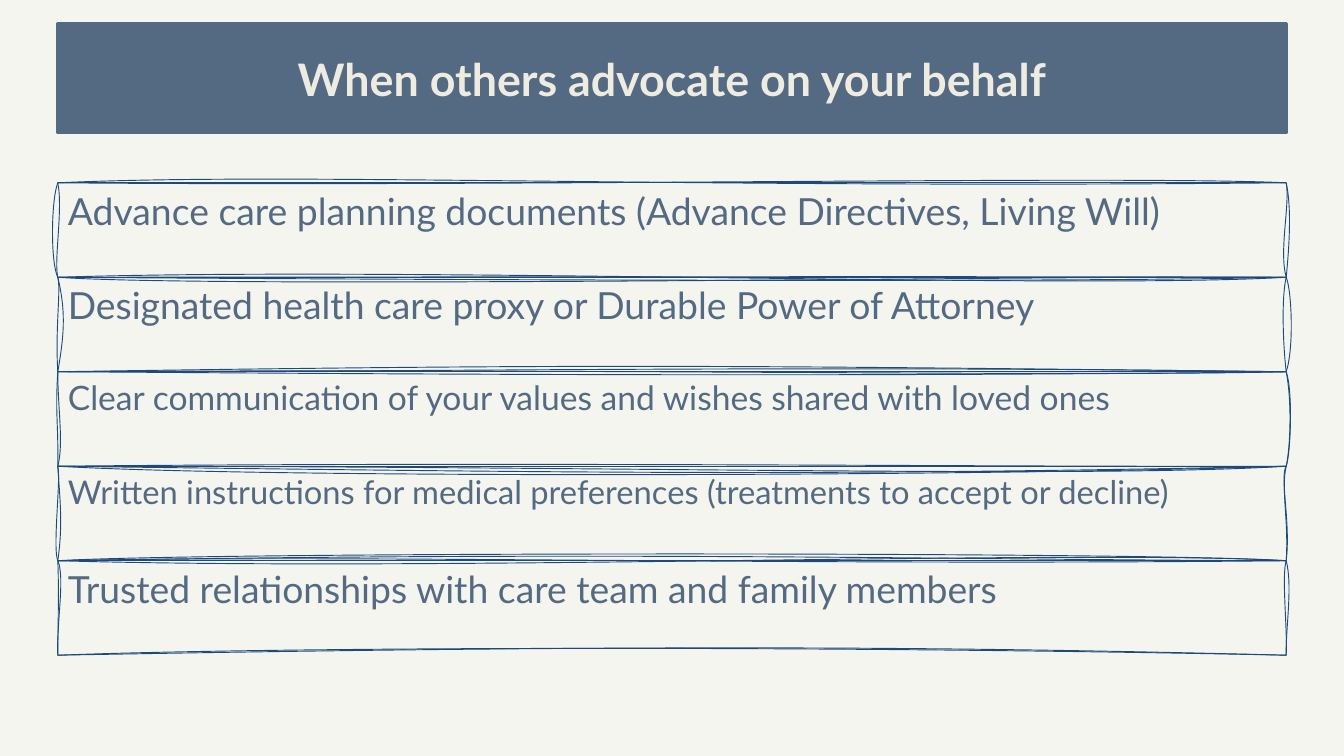
from lxml import etree
from pptx import Presentation
from pptx.dml.color import RGBColor
from pptx.enum.shapes import MSO_CONNECTOR
from pptx.enum.text import MSO_ANCHOR, MSO_AUTO_SIZE, PP_ALIGN
from pptx.oxml.ns import qn
from pptx.util import Inches, Pt

STRAIGHT = MSO_CONNECTOR.STRAIGHT
TOP, MIDDLE = MSO_ANCHOR.TOP, MSO_ANCHOR.MIDDLE
LEFT_ALIGN, CENTER = PP_ALIGN.LEFT, PP_ALIGN.CENTER
NO_AUTOFIT = MSO_AUTO_SIZE.NONE

PAPER, SLATE, CREAM, NAVY = "F5F5EF", "546982", "EEECE1", "1F497D"
LEFT, RIGHT = 0.86, 19.14
ROWS_TOP, ROWS_BOTTOM = 2.72, 9.75
UNITS = 1000  # path units per inch


def color(hex_code):
    return RGBColor.from_string(hex_code)


def write(shape, text, frame_format, paragraph_format, font_format, font_color):
    frame = shape.text_frame
    frame.text = text
    paragraph = frame.paragraphs[0]
    font = paragraph.runs[0].font
    for target, values in ((frame, frame_format), (paragraph, paragraph_format), (font, font_format)):
        for name, value in values.items():
            setattr(target, name, value)
    font.color.rgb = color(font_color)


# Each row: text, size, and two hand-drawn outlines. An outline lists the two
# curve control points of its top, right, bottom and left side, in slide inches.
rows = [
    ("Advance care planning documents (Advance Directives, Living Will)", 40, (
        [(4.4, 2.56), (10.05, 2.81), (19.2, 3.04), (19.03, 3.73),
         (16.01, 4.31), (6, 3.96), (0.75, 3.9), (0.76, 2.98)],
        [(7.63, 2.78), (16.75, 2.61), (19.22, 3.08), (19.19, 3.63),
         (16.88, 4.09), (3.29, 4.3), (0.8, 3.87), (0.94, 3.11)])),
    ("Designated health care proxy or Durable Power of Attorney", 40, (
        [(8.84, 4.12), (15, 4.11), (19.22, 4.31), (19.26, 5.17),
         (11.59, 5.63), (2.86, 5.54), (0.97, 4.91), (0.97, 4.59)],
        [(5.78, 4.16), (15.65, 4.21), (19.07, 4.42), (19.09, 5.1),
         (15.89, 5.61), (8.47, 5.48), (0.82, 4.86), (0.91, 4.31)])),
    ("Clear communication of your values and wishes shared with loved ones", 36, (
        [(6.22, 5.54), (11.6, 5.43), (19.23, 5.99), (19.2, 6.67),
         (14.56, 7.09), (3.98, 7.12), (0.95, 6.6), (0.86, 6.09)],
        [(8.93, 5.41), (10.93, 5.44), (19.24, 5.8), (19.21, 6.74),
         (14.52, 6.95), (7.81, 6.87), (0.87, 6.28), (0.82, 6.17)])),
    ("Written instructions for medical preferences (treatments to accept or decline)", 35, (
        [(8.41, 7.03), (11.94, 7.09), (19.06, 7.28), (19.18, 7.74),
         (17.25, 8.21), (3.06, 8.21), (0.94, 7.8), (0.89, 7.42)],
        [(8.97, 6.93), (16.18, 7.12), (19.04, 7.1), (19.21, 7.77),
         (11.57, 8.42), (5.4, 8.25), (0.78, 8.15), (0.91, 7.11)])),
    ("Trusted relationships with care team and family members", 40, (
        [(9.5, 8.2), (14, 8.33), (19.24, 8.72), (19.13, 9.36),
         (14.09, 9.62), (9.59, 9.59), (0.84, 9.28), (0.97, 8.58)],
        [(6.65, 8.51), (15.97, 8.17), (19.07, 8.57), (19.16, 9.34),
         (11.97, 9.6), (3.99, 9.63), (0.86, 9.47), (0.88, 8.75)])),
]

prs = Presentation()
prs.slide_width, prs.slide_height = Inches(20), Inches(11.25)
slide = prs.slides.add_slide(prs.slide_layouts[5])
slide.background.fill.solid()
slide.background.fill.fore_color.rgb = color(PAPER)

title = slide.shapes.title
title.left, title.top = Inches(LEFT), Inches(0.35)
title.width, title.height = Inches(RIGHT - LEFT), Inches(1.63)
title.fill.solid()
title.fill.fore_color.rgb = color(SLATE)
title.line.color.rgb = color(SLATE)
title.line.width = Pt(3)
write(title, "When others advocate on your behalf",
      {"vertical_anchor": MIDDLE, "auto_size": NO_AUTOFIT, "word_wrap": True},
      {"alignment": CENTER},
      {"size": Pt(48), "name": "Lato", "bold": True}, CREAM)

inset = Inches(0.15)
row_frame = {"vertical_anchor": TOP, "word_wrap": True, "margin_left": inset,
             "margin_top": inset, "margin_right": inset, "margin_bottom": inset}
row_height = (ROWS_BOTTOM - ROWS_TOP) / len(rows)

for index, (text, size, outlines) in enumerate(rows):
    top = ROWS_TOP + index * row_height
    bottom = top + row_height
    rule = slide.shapes.add_connector(
        STRAIGHT, Inches(LEFT), Inches(top), Inches(RIGHT), Inches(top))
    rule.line.color.rgb = color(NAVY)
    rule.line.width = Pt(1)
    etree.SubElement(rule._element.spPr, qn("a:effectLst"))

    for controls in outlines:
        corners = [(x * UNITS, y * UNITS) for x, y in
                   ((LEFT, top), (RIGHT, top), (RIGHT, bottom), (LEFT, bottom))]
        builder = slide.shapes.build_freeform(*corners[0], scale=Inches(1) / UNITS)
        builder.add_line_segments(corners[1:] + corners[:1], close=True)
        row_box = builder.convert_to_shape()
        row_box.shadow.inherit = False
        row_box.fill.background()
        row_box.line.color.rgb = color(NAVY)
        row_box.line.width = Pt(1)

        # Bend each straight side into a cubic curve.
        sides = list(row_box._element.iter(qn("a:lnTo")))
        for number, side in enumerate(sides):
            side_controls = controls[2 * number:2 * number + 2]
            curve = etree.Element(qn("a:cubicBezTo"))
            for x, y in side_controls:
                etree.SubElement(curve, qn("a:pt"), x=str(round((x - LEFT) * UNITS)),
                                 y=str(round((y - top) * UNITS)))
            curve.append(side[0])
            side.getparent().replace(side, curve)

    write(row_box, text, row_frame, {"alignment": LEFT_ALIGN, "line_spacing": 0.9},
          {"size": Pt(size), "name": "Lato"}, SLATE)

prs.save("out.pptx")
